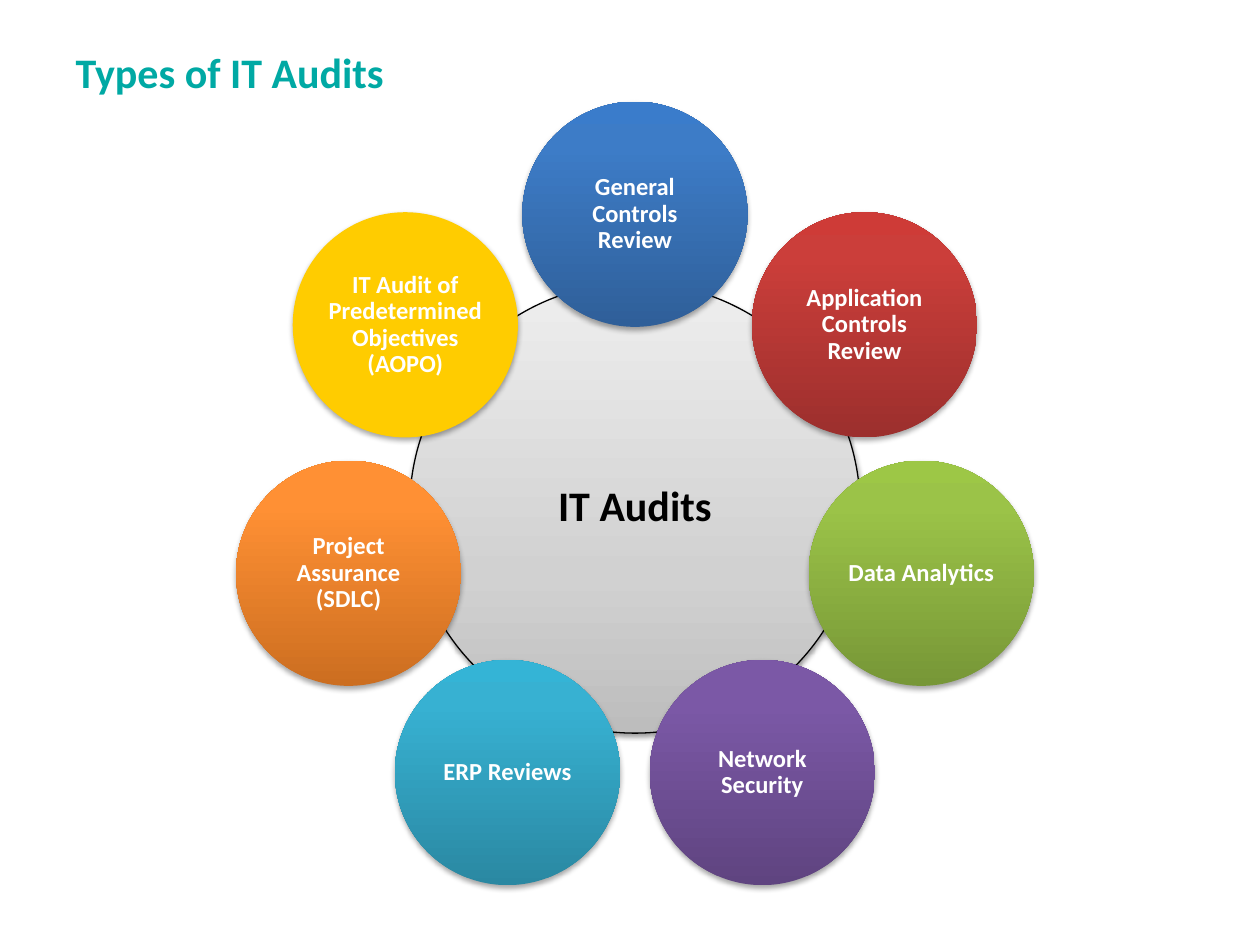
from math import cos, radians, sin

from pptx import Presentation
from pptx.dml.color import RGBColor
from pptx.enum.shapes import MSO_SHAPE
from pptx.enum.text import MSO_ANCHOR, PP_ALIGN
from pptx.oxml import parse_xml
from pptx.oxml.ns import nsdecls
from pptx.util import Cm, Pt

OVAL = MSO_SHAPE.OVAL
MIDDLE = MSO_ANCHOR.MIDDLE
LEFT, CENTER = PP_ALIGN.LEFT, PP_ALIGN.CENTER
TITLE_ONLY = 5

COLORS = {
    "title": "00A9A4", "black": "000000", "white": "FFFFFF", "yellow": "FFCC00",
    "gray_dark": "BDBDBD", "gray_mid": "D1D1D1", "gray_light": "EEEEEE",
    "blue_dark": "2F5F99", "blue_mid": "3D7CC7", "blue_light": "3A7CCB",
    "red_dark": "9C2F2D", "red_mid": "CB3E3A", "red_light": "CE3B37",
    "green_dark": "779737", "green_mid": "9BC348", "green_light": "9DC746",
    "purple_dark": "5F4480", "purple_mid": "7B58A6", "purple_light": "7C57A8",
    "teal_dark": "2A88A2", "teal_mid": "37B1D2", "teal_light": "34B4D6",
    "orange_dark": "CC6E20", "orange_mid": "FF9034", "orange_light": "FF9136",
}

AUDITS = [
    ("General Controls Review", "blue"),
    ("Application Controls Review", "red"),
    ("Data Analytics", "green"),
    ("Network Security", "purple"),
    ("ERP Reviews", "teal"),
    ("Project Assurance (SDLC)", "orange"),
    ("IT Audit of Predetermined Objectives (AOPO)", "yellow"),
]

HUB = {"size": 24, "color": "black", "margin": 0.1, "mid_stop": 35,
       "shadow_alpha": 38, "shadow_dist": 1.6}
SATELLITE = {"size": 14, "color": "white", "margin": 0.05, "mid_stop": 80,
             "shadow_alpha": 35, "shadow_dist": 1.8}


def rgb(name):
    """Return the named colour."""
    return RGBColor.from_string(COLORS[name])


def format_text(tf, text, size, color, align, spacing):
    """Write one bold paragraph, centred vertically in its frame."""
    tf.text = text
    tf.word_wrap = True
    tf.vertical_anchor = MIDDLE
    p = tf.paragraphs[0]
    p.alignment, p.line_spacing = align, spacing
    font = {"name": "Calibri", "size": Pt(size), "bold": True}
    for name, value in font.items():
        setattr(p.runs[0].font, name, value)
    p.runs[0].font.color.rgb = rgb(color)


def fill_gradient(s, hue, mid_stop):
    """Fill a shape with a three-stop gradient, dark at the bottom."""
    stops = "".join(
        f'<a:gs pos="{pos * 1000}"><a:srgbClr val="{COLORS[f"{hue}_{shade}"]}"/></a:gs>'
        for pos, shade in ((0, "dark"), (mid_stop, "mid"), (100, "light")))
    s._element.spPr.insert(2, parse_xml(
        f'<a:gradFill {nsdecls("a")} rotWithShape="1"><a:gsLst>{stops}</a:gsLst>'
        '<a:lin ang="16200000" scaled="0"/></a:gradFill>'))


def add_shadow(s, alpha, dist):
    """Give a shape a soft shadow straight below it."""
    s.shadow.inherit = False
    s._element.spPr.effectLst.append(parse_xml(
        f'<a:outerShdw {nsdecls("a")} blurRad="{Pt(3.1)}" dist="{Pt(dist)}" '
        'dir="5400000" rotWithShape="0"><a:srgbClr val="000000">'
        f'<a:alpha val="{alpha * 1000}"/></a:srgbClr></a:outerShdw>'))


def add_circle(slide, x, y, diameter, text, hue, style):
    """Add a labelled circle centred at x, y in centimetres."""
    s = slide.shapes.add_shape(OVAL, Cm(x - diameter / 2), Cm(y - diameter / 2),
                               Cm(diameter), Cm(diameter))
    s.line.fill.background()
    if hue in COLORS:
        s.fill.solid()
        s.fill.fore_color.rgb = rgb(hue)
    else:
        fill_gradient(s, hue, style["mid_stop"])
    add_shadow(s, style["shadow_alpha"], style["shadow_dist"])
    tf = s.text_frame
    for side in ("left", "top", "right", "bottom"):
        setattr(tf, f"margin_{side}", Cm(style["margin"]))
    format_text(tf, text, style["size"], style["color"], CENTER, 0.9)
    return s


def add_title(slide, left, top, width, height):
    """Place and format the title placeholder."""
    s = slide.shapes.title
    box = {"left": left, "top": top, "width": width, "height": height}
    for name, value in box.items():
        setattr(s, name, Cm(value))
    format_text(s.text_frame, "Types of IT Audits", 24, "title", LEFT, 1.0)


def add_audit_wheel(slide, left, top, size):
    """Draw the hub and its ring of audit types; size is the ring's diameter."""
    radius = size / 2
    x, y = left + radius, top + radius
    satellite = 4.54
    hub = add_circle(slide, x, y, 2 * satellite, "IT Audits", "gray", HUB)
    hub.line.color.rgb = rgb("black")
    hub.line.width = Pt(0.75)
    for i, (text, hue) in enumerate(AUDITS):
        angle = radians(360 * i / len(AUDITS))
        add_circle(slide, x + radius * sin(angle), y - radius * cos(angle),
                   satellite, text, hue, SATELLITE)


def main():
    """Build and save the slide."""
    prs = Presentation()
    prs.slide_width, prs.slide_height = Cm(25.4), Cm(19.05)
    slide = prs.slides.add_slide(prs.slide_layouts[TITLE_ONLY])
    add_title(slide, 1.27, 0.76, 22.43, 1.35)
    add_audit_wheel(slide, 6.88, 4.32, 11.84)
    prs.save("out.pptx")


if __name__ == "__main__":
    main()
